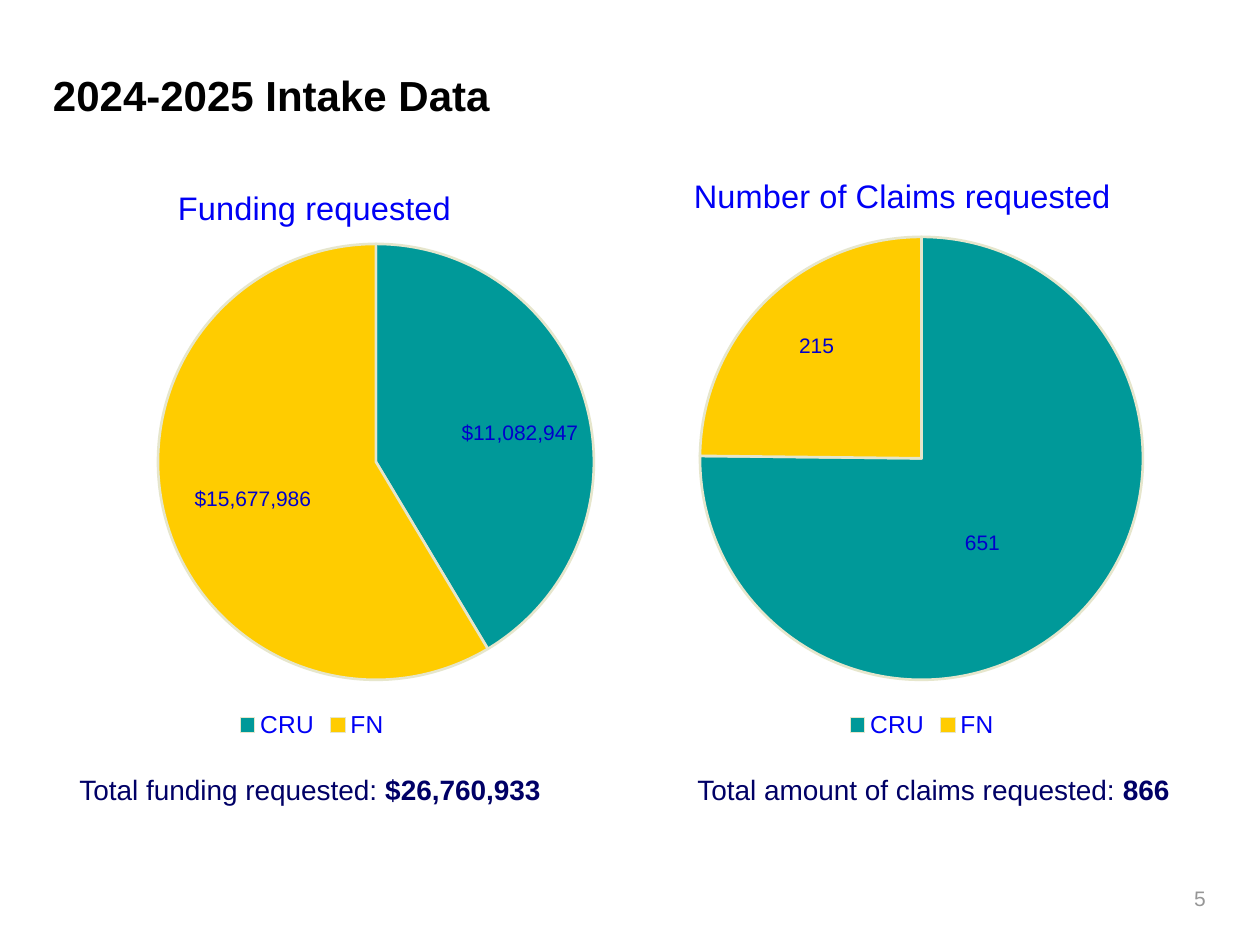
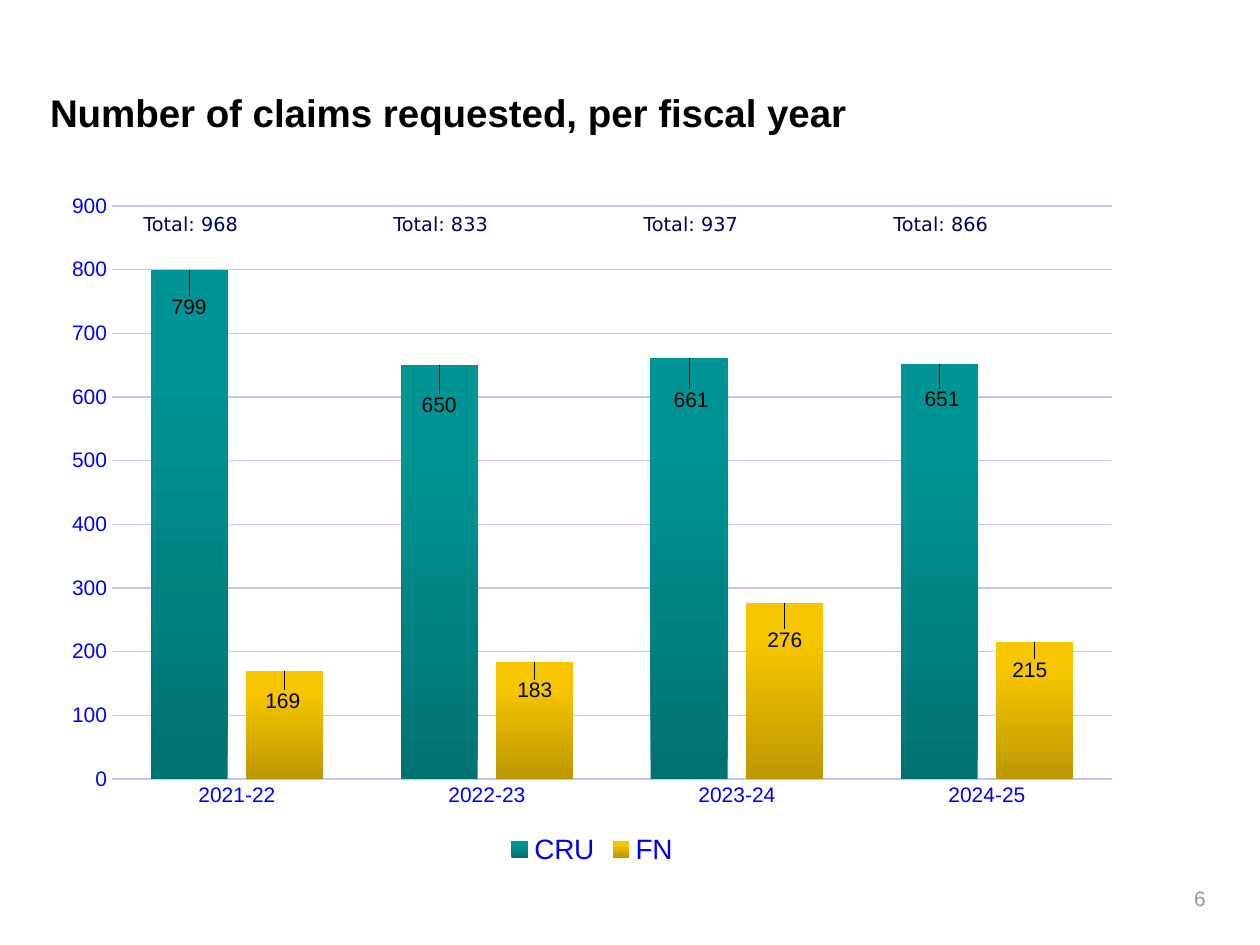
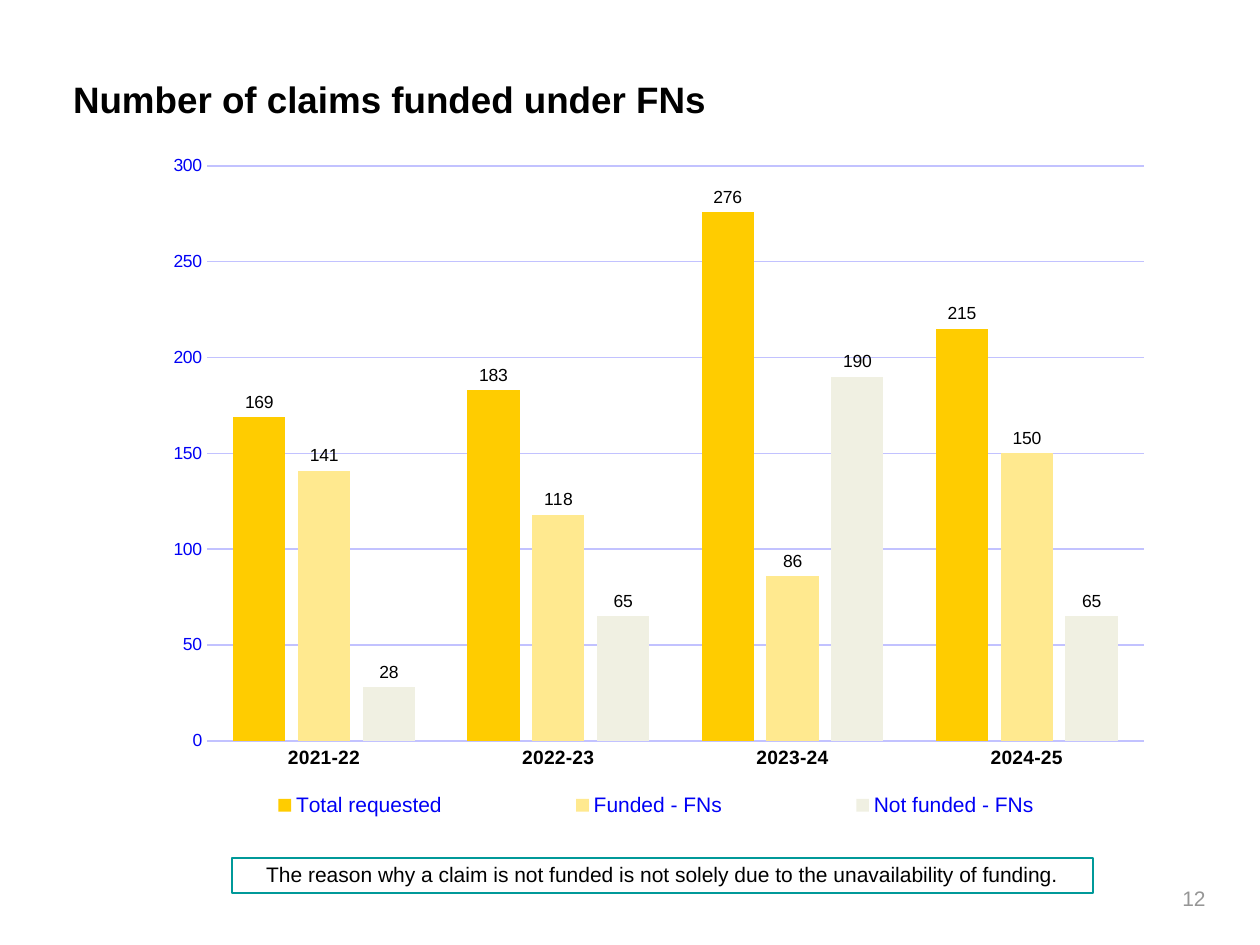
"""Build three slides on claim intake and funding with pie and column charts."""
from pptx import Presentation
from pptx.chart.data import CategoryChartData
from pptx.dml.color import RGBColor
from pptx.enum.chart import XL_CHART_TYPE, XL_LABEL_POSITION, XL_LEGEND_POSITION, XL_TICK_MARK
from pptx.enum.shapes import MSO_SHAPE
from pptx.enum.text import MSO_ANCHOR, MSO_AUTO_SIZE, PP_ALIGN
from pptx.oxml import parse_xml
from pptx.oxml.ns import nsdecls, qn
from pptx.util import Emu, Pt

PX = 914400 / 126
BLACK = RGBColor(0x00, 0x00, 0x00)
GREY = RGBColor(0x96, 0x96, 0x96)
NAVY = RGBColor(0x00, 0x00, 0x66)
BLUE = RGBColor(0x00, 0x00, 0xF5)
LABEL_BLUE = RGBColor(0x00, 0x00, 0xCC)
GRID_BLUE = RGBColor(0xC2, 0xC2, 0xFF)
TEAL = RGBColor(0x00, 0x99, 0x99)
TEAL_DARK = RGBColor(0x00, 0x72, 0x72)
TEAL_LIGHT = RGBColor(0x00, 0x94, 0x94)
GOLD = RGBColor(0xFF, 0xCC, 0x00)
GOLD_DARK = RGBColor(0xBE, 0x98, 0x00)
GOLD_LIGHT = RGBColor(0xF7, 0xC6, 0x00)
PALE_GOLD = RGBColor(0xFF, 0xE9, 0x8F)
IVORY = RGBColor(0xF0, 0xF0, 0xE2)
SLICE_EDGE = RGBColor(0xE6, 0xE6, 0xCC)
YEARS = ["2021-22", "2022-23", "2023-24", "2024-25"]


def px(*lengths):
    """Turn pixel lengths into EMU."""
    return [Emu(round(length * PX)) for length in lengths]


def arrange(parent, index, **settings):
    """Give a chart part a manual layout at its place among the children."""
    previous = parent.find(qn("c:layout"))
    if previous is not None:
        parent.remove(previous)
    fields = "".join(f'<c:{key} val="{value}"/>' for key, value in settings.items())
    parent.insert(index, parse_xml(
        f'<c:layout {nsdecls("c")}><c:manualLayout>{fields}</c:manualLayout></c:layout>'))


deck = Presentation()
deck.slide_width, deck.slide_height = px(1260, 945)
captions = []

headings = [
    ("2024-2025 Intake Data", 24, (53, 78, 1081, 42), "5"),
    ("Number of claims requested, per fiscal year", 22, (50, 93, 1081, 42), "6"),
    ("Number of claims funded under FNs", 21, (73, 79, 1187, 42), "12"),
]
for heading, size, area, number in headings:
    slide = deck.slides.add_slide(deck.slide_layouts[5])
    title = slide.shapes.title
    title.left, title.top, title.width, title.height = px(*area)
    frame = title.text_frame
    frame.margin_left = frame.margin_top = frame.margin_right = frame.margin_bottom = 0
    frame.vertical_anchor = MSO_ANCHOR.TOP
    frame.auto_size = MSO_AUTO_SIZE.NONE
    paragraph = frame.paragraphs[0]
    paragraph.alignment = PP_ALIGN.LEFT
    paragraph.line_spacing = Pt(24)
    run = paragraph.add_run()
    run.text = heading
    run.font.name = "Arial"
    run.font.size = Pt(size)
    run.font.bold = True
    run.font.color.rgb = BLACK
    page_box = slide.shapes.add_textbox(*px(1113, 882, 105, 42))
    captions.append((page_box, PP_ALIGN.RIGHT, 12, GREY, "Arial", [(number, False)]))

intake, requested, funded = deck.slides

pies = [
    ("Funding requested", (-110, 152, 844, 592), [11082947, 15677986], '"$"#,##0',
     (282, 28), (268, 92, 436), [(39, 0), (-18, 8)]),
    ("Number of Claims requested", (500, 152, 844, 592), [651, 215], "General",
     (188, 16), (200, 85, 443), [(-17, 6), (-27, -33)]),
]
for heading, area, amounts, number_format, heading_at, circle, shifts in pies:
    width, height = area[2:]
    data = CategoryChartData(number_format=number_format)
    data.categories = ["CRU", "FN"]
    data.add_series("Series 1", amounts)
    chart = intake.shapes.add_chart(XL_CHART_TYPE.PIE, *px(*area), data).chart
    chart.font.name = "Arial"
    chart.font.size = Pt(10)
    chart.font.color.rgb = NAVY
    chart.has_title = True
    run = chart.chart_title.text_frame.paragraphs[0].add_run()
    run.text = heading
    run.font.name = "Arial"
    run.font.size = Pt(18.6)
    run.font.bold = False
    run.font.color.rgb = BLUE
    arrange(chart.element.xpath(".//c:title")[0], 1, xMode="edge", yMode="edge",
            x=heading_at[0] / width, y=heading_at[1] / height)
    left, top, diameter = circle
    arrange(chart.element.xpath(".//c:plotArea")[0], 0, layoutTarget="inner",
            xMode="edge", yMode="edge", x=left / width, y=top / height,
            w=diameter / width, h=diameter / height)
    chart.has_legend = True
    chart.legend.position = XL_LEGEND_POSITION.BOTTOM
    chart.legend.include_in_layout = False
    chart.legend.font.name = "Arial"
    chart.legend.font.size = Pt(14)
    chart.legend.font.color.rgb = BLUE
    slices = chart.plots[0].series[0]
    slices.data_labels.show_value = True
    slices.data_labels.number_format = number_format
    slices.data_labels.number_format_is_linked = False
    for index, color in enumerate([TEAL, GOLD]):
        point = slices.points[index]
        point.format.fill.solid()
        point.format.fill.fore_color.rgb = color
        point.format.line.color.rgb = SLICE_EDGE
        point.format.line.width = Pt(1.5)
        point.data_label.font.name = "Arial"
        point.data_label.font.size = Pt(12)
        point.data_label.font.color.rgb = LABEL_BLUE
        point.data_label.position = XL_LABEL_POSITION.CENTER
    for label, (right, down) in zip(chart.element.xpath(".//c:dLbl"), shifts):
        arrange(label, 1, x=right / width, y=down / height)

columns = [
    (requested, (50, 180, 1084, 690), (62, 26, 1000, 573), 900, 100, (12, 12, 16, 12),
     [("CRU", [799, 650, 661, 651], (TEAL_DARK, TEAL_LIGHT),
       [(0, 53), (0, 56), (2, 58), (3, 51)]),
      ("FN", [169, 183, 276, 215], (GOLD_DARK, GOLD_LIGHT),
       [(-2, 46), (0, 44), (0, 53), (-5, 44)])]),
    (funded, (141, 147, 1041, 693), (66, 19, 937, 575), 300, 50, (11, 10, 12, 10),
     [("Total requested", [169, 183, 276, 215], (GOLD,), []),
      ("Funded - FNs", [141, 118, 86, 150], (PALE_GOLD,), []),
      ("Not funded - FNs", [28, 65, 190, 65], (IVORY,), [])]),
]
for slide, area, plot_area, maximum, step, sizes, groups in columns:
    width, height = area[2:]
    year_size, scale_size, legend_size, label_size = sizes
    data = CategoryChartData()
    data.categories = YEARS
    for name, claims, colors, shifts in groups:
        data.add_series(name, claims)
    chart = slide.shapes.add_chart(XL_CHART_TYPE.COLUMN_CLUSTERED, *px(*area), data).chart
    chart.has_title = False
    chart.font.name = "Arial"
    chart.font.size = Pt(10)
    chart.font.color.rgb = NAVY
    left, top, across, down = plot_area
    arrange(chart.element.xpath(".//c:plotArea")[0], 0, layoutTarget="inner",
            xMode="edge", yMode="edge", x=left / width, y=top / height,
            w=across / width, h=down / height)
    chart.has_legend = True
    chart.legend.position = XL_LEGEND_POSITION.BOTTOM
    chart.legend.include_in_layout = False
    for axis, size in ((chart.category_axis, year_size), (chart.value_axis, scale_size)):
        axis.major_tick_mark = axis.minor_tick_mark = XL_TICK_MARK.NONE
        axis.tick_labels.font.size = Pt(size)
    for font in (chart.category_axis.tick_labels.font, chart.value_axis.tick_labels.font,
                 chart.legend.font):
        font.name = "Arial"
        font.color.rgb = BLUE
    chart.legend.font.size = Pt(legend_size)
    chart.category_axis.format.line.color.rgb = GRID_BLUE
    chart.category_axis.format.line.width = Pt(1)
    scale = chart.value_axis
    scale.minimum_scale, scale.maximum_scale, scale.major_unit = 0, maximum, step
    scale.format.line.fill.background()
    scale.major_gridlines.format.line.color.rgb = GRID_BLUE
    scale.major_gridlines.format.line.width = Pt(0.75)
    plot = chart.plots[0]
    plot.gap_width = 100
    plot.overlap = -24
    plot.vary_by_categories = False
    for series, (name, claims, colors, shifts) in zip(plot.series, groups):
        fill = series.format.fill
        if len(colors) == 1:
            fill.solid()
            fill.fore_color.rgb = colors[0]
        else:
            fill.gradient()
            fill.gradient_angle = 90
            for stop, color, position in zip(fill.gradient_stops, colors, (0, 0.8)):
                stop.color.rgb = color
                stop.position = position
        series.data_labels.show_value = True
        point_labels = [series.points[index].data_label for index in range(len(shifts))]
        for label in [series.data_labels, *point_labels]:
            label.position = XL_LABEL_POSITION.OUTSIDE_END
            label.font.name = "Arial"
            label.font.size = Pt(label_size)
            label.font.color.rgb = BLACK
    all_shifts = [shift for group in groups for shift in group[3]]
    for label, (right, down) in zip(chart.element.xpath(".//c:dLbl"), all_shifts):
        arrange(label, 1, x=right / width, y=down / height)

funded_years = chart.category_axis.tick_labels.font
funded_years.bold = True
funded_years.color.rgb = BLACK
arrange(chart.element.xpath(".//c:legend")[0], 1, xMode="edge", yMode="edge",
        x=0.01, y=0.92, w=0.97, h=0.06)

sums = [
    ((67, 770, 494, 43), "Total funding requested: ", "$26,760,933"),
    ((685, 770, 512, 43), "Total amount of claims requested: ", "866"),
]
for area, lead, amount in sums:
    captions.append((intake.shapes.add_textbox(*px(*area)), PP_ALIGN.LEFT, 16, NAVY, "Arial",
                     [(lead, False), (amount, True)]))

for index, total in enumerate([968, 833, 937, 866]):
    year_total = requested.shapes.add_textbox(*px(131 + 250 * index, 209, 179, 34))
    captions.append((year_total, PP_ALIGN.LEFT, 11, NAVY, "DejaVu Sans",
                     [(f"Total: {total}", False)]))

reason = funded.shapes.add_shape(MSO_SHAPE.RECTANGLE, *px(232, 858, 861, 35))
reason.shadow.inherit = False
reason.fill.background()
reason.line.color.rgb = TEAL
reason.line.width = Pt(0.75)
reason.text_frame.vertical_anchor = MSO_ANCHOR.MIDDLE
captions.append((reason, PP_ALIGN.CENTER, 12, BLACK, "Arial", [(
    "The reason why a claim is not funded is not solely due to the unavailability of funding.",
    False)]))

for holder, alignment, size, color, typeface, pieces in captions:
    holder.text_frame.word_wrap = True
    paragraph = holder.text_frame.paragraphs[0]
    paragraph.alignment = alignment
    paragraph.line_spacing = 0.9
    for text, bold in pieces:
        run = paragraph.add_run()
        run.text = text
        run.font.name = typeface
        run.font.size = Pt(size)
        run.font.bold = bold
        run.font.color.rgb = color

deck.save("out.pptx")
